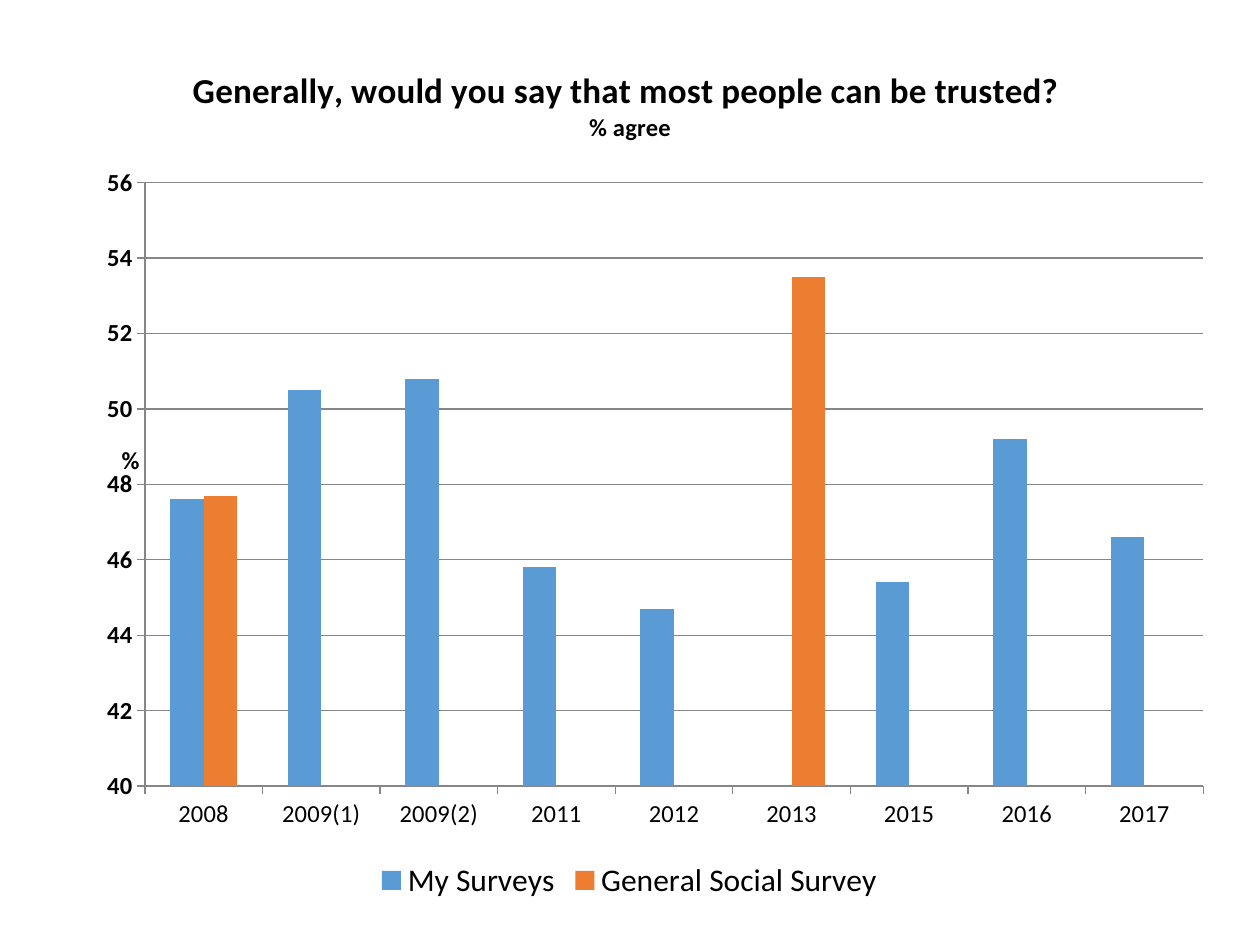
from lxml import etree
from pptx import Presentation
from pptx import util as u
from pptx.chart.data import CategoryChartData
from pptx.dml.color import RGBColor
from pptx.enum import chart as ch
from pptx.oxml.ns import qn

YEARS = ["2008", "2009(1)", "2009(2)", "2011", "2012", "2013", "2015", "2016", "2017"]
SURVEYS = [
    ("My Surveys", "5B9BD5", [47.6, 50.5, 50.8, 45.8, 44.7, None, 45.4, 49.2, 46.6]),
    ("General Social Survey", "ED7D31", [47.7, None, None, None, None, 53.5, None, None, None]),
]


def color(value):
    """Turn a hex string into a colour."""
    return RGBColor.from_string(value)


def set_font(font, size, bold=False):
    """Apply the chart's typeface in black at the given size."""
    font.name = "Calibri"
    font.size = u.Pt(size)
    font.bold = bold
    font.color.rgb = color("000000")


def place(element, index, area, **lengths):
    """Fix the position of a chart part inside the chart area."""
    layout = element.find(qn("c:layout"))
    if layout is None:
        layout = etree.Element(qn("c:layout"))
        element.insert(index, layout)
    manual = etree.SubElement(layout, qn("c:manualLayout"))
    if "w" in lengths:
        etree.SubElement(manual, qn("c:layoutTarget"), val="inner")
    for axis in "xy":
        etree.SubElement(manual, qn(f"c:{axis}Mode"), val="edge")
    width, height = area
    for key, length in lengths.items():
        whole = width if key in "xw" else height
        etree.SubElement(manual, qn(f"c:{key}"), val=str(length / whole))


def write_title(title, lines, area, x, y):
    """Write bold title lines and place them in the chart area."""
    frame = title.text_frame
    for number, (line, size) in enumerate(lines):
        paragraph = frame.add_paragraph() if number else frame.paragraphs[0]
        run = paragraph.add_run()
        run.text = line
        set_font(run.font, size, True)
    place(title._element, 1, area, x=x, y=y)


def style_axis(axis, bold):
    """Give an axis its labels, outside ticks and grey line."""
    set_font(axis.tick_labels.font, 14, bold)
    axis.major_tick_mark = ch.XL_TICK_MARK.OUTSIDE
    axis.minor_tick_mark = ch.XL_TICK_MARK.NONE
    axis.format.line.color.rgb = color("868686")


def add_trust_chart(slide, left, top, width, height):
    """Draw the clustered columns of trust by year in the given box."""
    data = CategoryChartData()
    data.categories = YEARS
    for name, _, shares in SURVEYS:
        data.add_series(name, shares)
    chart = slide.shapes.add_chart(
        ch.XL_CHART_TYPE.COLUMN_CLUSTERED, left, top, width, height, data).chart
    area = (width, height)
    set_font(chart.font, 10)
    write_title(chart.chart_title, [
        ("Generally, would you say that most people can be trusted? ", 20),
        ("% agree", 14)], area, u.Inches(1.24), u.Inches(0.19))

    plot = chart.plots[0]
    plot.gap_width = 150
    plot.overlap = 0
    plot.vary_by_categories = False
    for series, (_, fill, _) in zip(plot.series, SURVEYS):
        series.format.fill.solid()
        series.format.fill.fore_color.rgb = color(fill)
        series.invert_if_negative = False
    place(chart._chartSpace.chart.plotArea, 0, area, x=u.Inches(0.89),
          y=u.Inches(1.14), w=u.Inches(8.4), h=u.Inches(4.79))

    style_axis(chart.category_axis, False)
    percent = chart.value_axis
    style_axis(percent, True)
    percent.minimum_scale, percent.maximum_scale, percent.major_unit = 40, 56, 2
    percent.tick_labels.number_format = "General"
    percent.tick_labels.number_format_is_linked = False
    percent.has_major_gridlines = True
    percent.major_gridlines.format.line.color.rgb = color("868686")
    write_title(percent.axis_title, [("%", 14)], area, u.Inches(0.67), u.Inches(3.17))
    percent.axis_title.text_frame._txBody.bodyPr.set("rot", "0")

    chart.has_legend = True
    chart.legend.position = ch.XL_LEGEND_POSITION.BOTTOM
    chart.legend.include_in_layout = False
    set_font(chart.legend.font, 18)


def main():
    """Build the slide and save it."""
    deck = Presentation()
    deck.slide_width, deck.slide_height = u.Inches(10), u.Inches(7.5)
    slide = deck.slides.add_slide(deck.slide_layouts[6])
    add_trust_chart(slide, u.Inches(0.26), u.Inches(0.31), u.Inches(9.47), u.Inches(6.88))
    deck.save("out.pptx")


if __name__ == "__main__":
    main()
